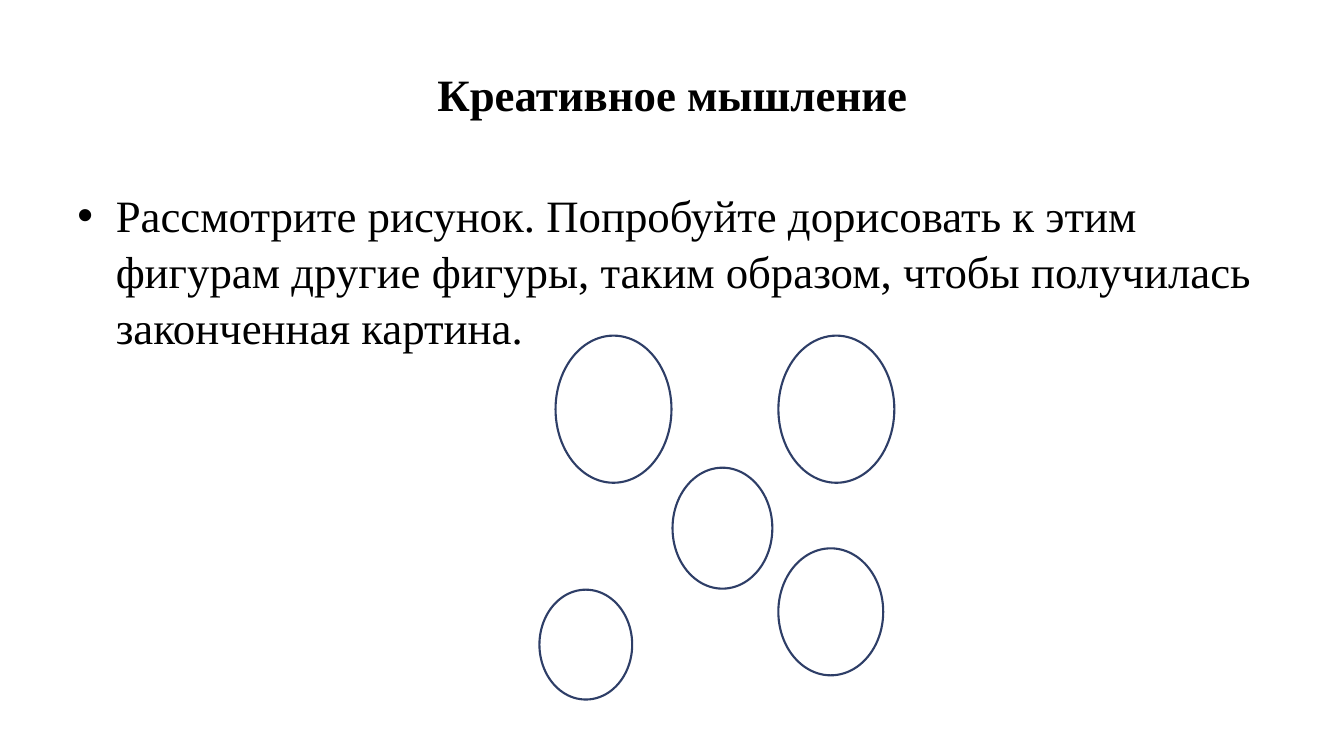
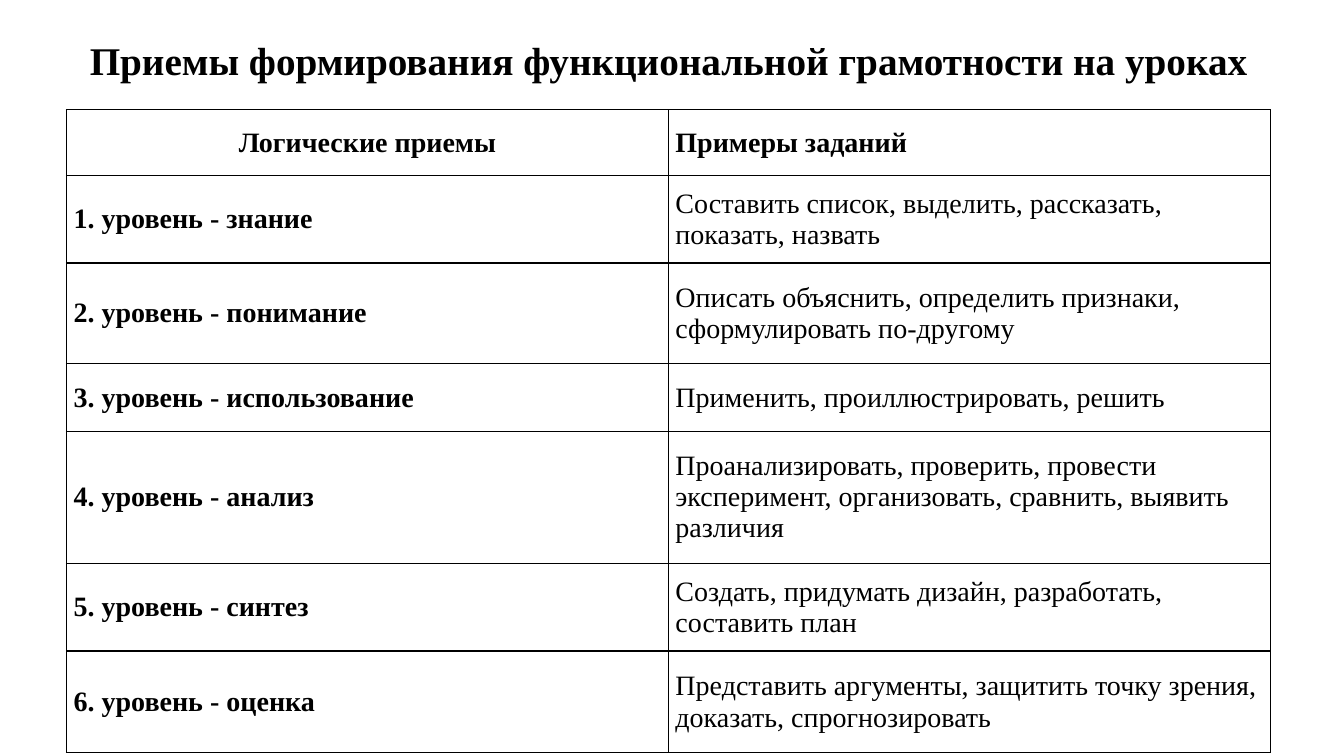
from lxml.etree import SubElement
from pptx import Presentation
from pptx.dml.color import RGBColor
from pptx.enum.shapes import MSO_SHAPE
from pptx.enum.text import MSO_ANCHOR, PP_ALIGN
from pptx.oxml.ns import qn
from pptx.util import Inches, Pt

WIDTH, HEIGHT = 13.33, 7.5
FONT = "Times New Roman"
BLACK, WHITE, NAVY = "000000", "FFFFFF", "2E3E67"

THINKING_TITLE = "Креативное мышление"
TASK = ("Рассмотрите рисунок. Попробуйте дорисовать к этим фигурам другие фигуры, "
        "таким образом, чтобы получилась законченная картина.")
# left, top, width, height
OVALS = [
    (5.51, 3.33, 1.15, 1.46),
    (7.72, 3.33, 1.15, 1.46),
    (6.67, 4.64, 0.99, 1.2),
    (5.35, 5.85, 0.92, 1.09),
    (7.72, 5.44, 1.04, 1.26),
]

METHODS_TITLE = "Приемы формирования функциональной грамотности на уроках"
HEADERS = ("Логические приемы", "Примеры заданий")
# row height, level, example tasks
LEVELS = [
    (0.87, "знание", "Составить список, выделить, рассказать, показать, назвать"),
    (1, "понимание", "Описать объяснить, определить признаки, сформулировать по-другому"),
    (0.67, "использование", "Применить, проиллюстрировать, решить"),
    (1.31, "анализ", "Проанализировать, проверить, провести эксперимент, "
                     "организовать, сравнить, выявить различия"),
    (0.87, "синтез", "Создать, придумать дизайн, разработать, составить план"),
    (1.01, "оценка", "Представить аргументы, защитить точку зрения, доказать, спрогнозировать"),
]
HEADER_HEIGHT = 0.65
TABLE_LEFT, TABLE_TOP, TABLE_WIDTH = 0.66, 1.09, 11.94


def color(value):
    return RGBColor.from_string(value)


def inches(*lengths):
    return [Inches(length) for length in lengths]


def style(paragraph, size, bold=False, align=PP_ALIGN.LEFT):
    paragraph.alignment = align
    for run in paragraph.runs:
        run.font.name = FONT
        run.font.size = Pt(size)
        run.font.bold = bold
        run.font.color.rgb = color(BLACK)


def add_text(slide, box, text, anchor):
    text_frame = slide.shapes.add_textbox(*inches(*box)).text_frame
    text_frame.word_wrap = True
    text_frame.vertical_anchor = anchor
    text_frame.text = text
    return text_frame


def add_title(slide, box, text, size):
    text_frame = add_text(slide, box, text, MSO_ANCHOR.MIDDLE)
    style(text_frame.paragraphs[0], size, True, PP_ALIGN.CENTER)


def add_bullet(paragraph, indent):
    properties = paragraph._p.get_or_add_pPr()
    properties.set("marL", str(Inches(indent)))
    properties.set("indent", str(-Inches(indent)))
    SubElement(properties, qn("a:buFont"), typeface="Arial")
    SubElement(properties, qn("a:buChar"), char="•")


def add_oval(slide, box):
    oval = slide.shapes.add_shape(MSO_SHAPE.OVAL, *inches(*box))
    oval.shadow.inherit = False
    oval.fill.solid()
    oval.fill.fore_color.rgb = color(WHITE)
    oval.line.color.rgb = color(NAVY)
    oval.line.width = Pt(1.5)


def add_borders(cell):
    properties = cell._tc.get_or_add_tcPr()
    for side in ("a:lnL", "a:lnR", "a:lnT", "a:lnB"):
        line = SubElement(properties, qn(side), w=str(Pt(1)))
        fill = SubElement(line, qn("a:solidFill"))
        SubElement(fill, qn("a:srgbClr"), val=BLACK)


def fill_cell(cell, text, bold, align):
    add_borders(cell)
    cell.fill.solid()
    cell.fill.fore_color.rgb = color(WHITE)
    cell.margin_left = cell.margin_right = Inches(0.07)
    cell.margin_top = cell.margin_bottom = 0
    cell.vertical_anchor = MSO_ANCHOR.MIDDLE
    cell.text_frame.text = text
    style(cell.text_frame.paragraphs[0], 20, bold, align)


def build_thinking(slide):
    add_title(slide, (0.67, 0.3, 12, 1.25), THINKING_TITLE, 32)
    text_frame = add_text(slide, (0.67, 1.75, 12, 4.95), TASK, MSO_ANCHOR.TOP)
    text_frame.margin_top = Inches(0.09)
    paragraph = text_frame.paragraphs[0]
    paragraph.line_spacing = 1.04
    add_bullet(paragraph, 0.38)
    style(paragraph, 32)
    for box in OVALS:
        add_oval(slide, box)


def build_methods(slide):
    add_title(slide, (TABLE_LEFT, 0.23, TABLE_WIDTH, 0.73), METHODS_TITLE, 28)
    heights = [HEADER_HEIGHT] + [height for height, _, _ in LEVELS]
    rows = [HEADERS] + [(f"{number}. уровень - {level}", tasks)
                        for number, (_, level, tasks) in enumerate(LEVELS, 1)]
    box = inches(TABLE_LEFT, TABLE_TOP, TABLE_WIDTH, sum(heights))
    table = slide.shapes.add_table(len(rows), len(HEADERS), *box).table
    for index, (height, texts) in enumerate(zip(heights, rows)):
        table.rows[index].height = Inches(height)
        is_header = index == 0
        first_align = PP_ALIGN.CENTER if is_header else PP_ALIGN.JUSTIFY
        fill_cell(table.cell(index, 0), texts[0], True, first_align)
        fill_cell(table.cell(index, 1), texts[1], is_header, PP_ALIGN.LEFT)


def main():
    presentation = Presentation()
    presentation.slide_width, presentation.slide_height = inches(WIDTH, HEIGHT)
    for build in (build_thinking, build_methods):
        build(presentation.slides.add_slide(presentation.slide_layouts[6]))
    presentation.save("out.pptx")


if __name__ == "__main__":
    main()
